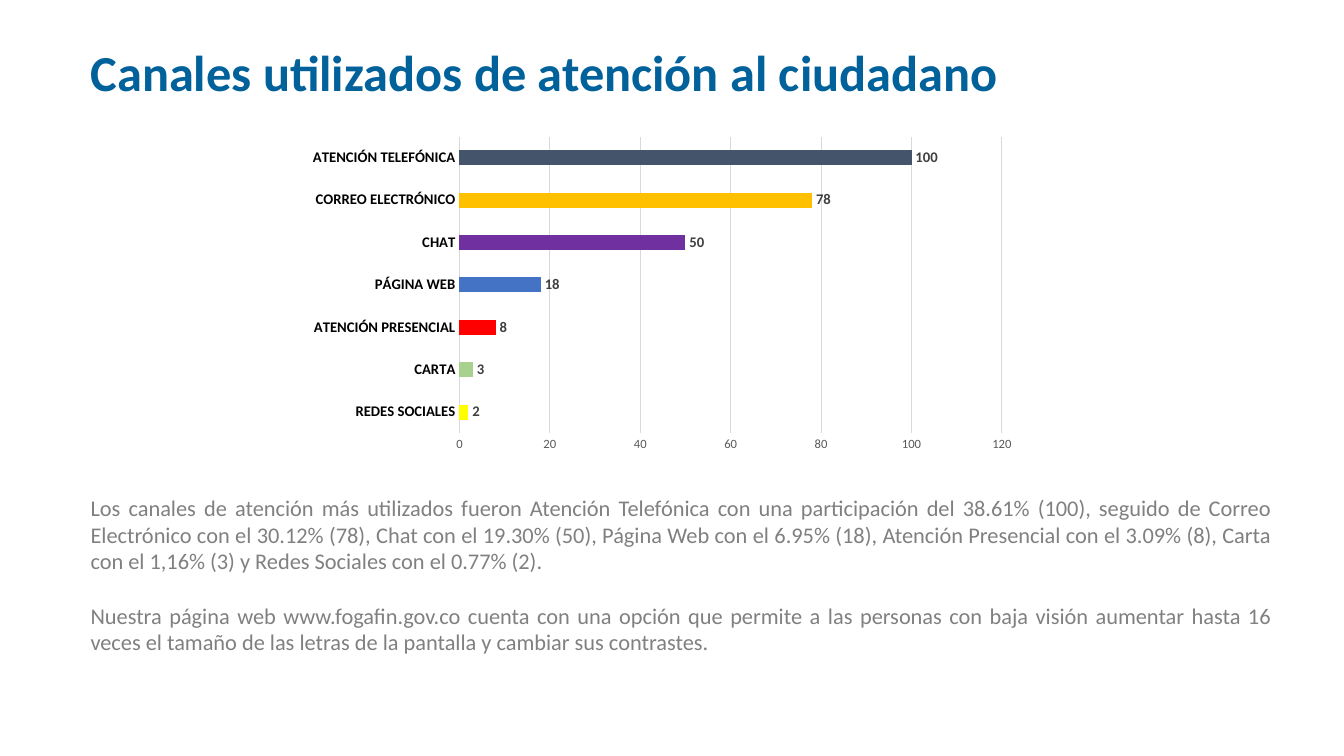
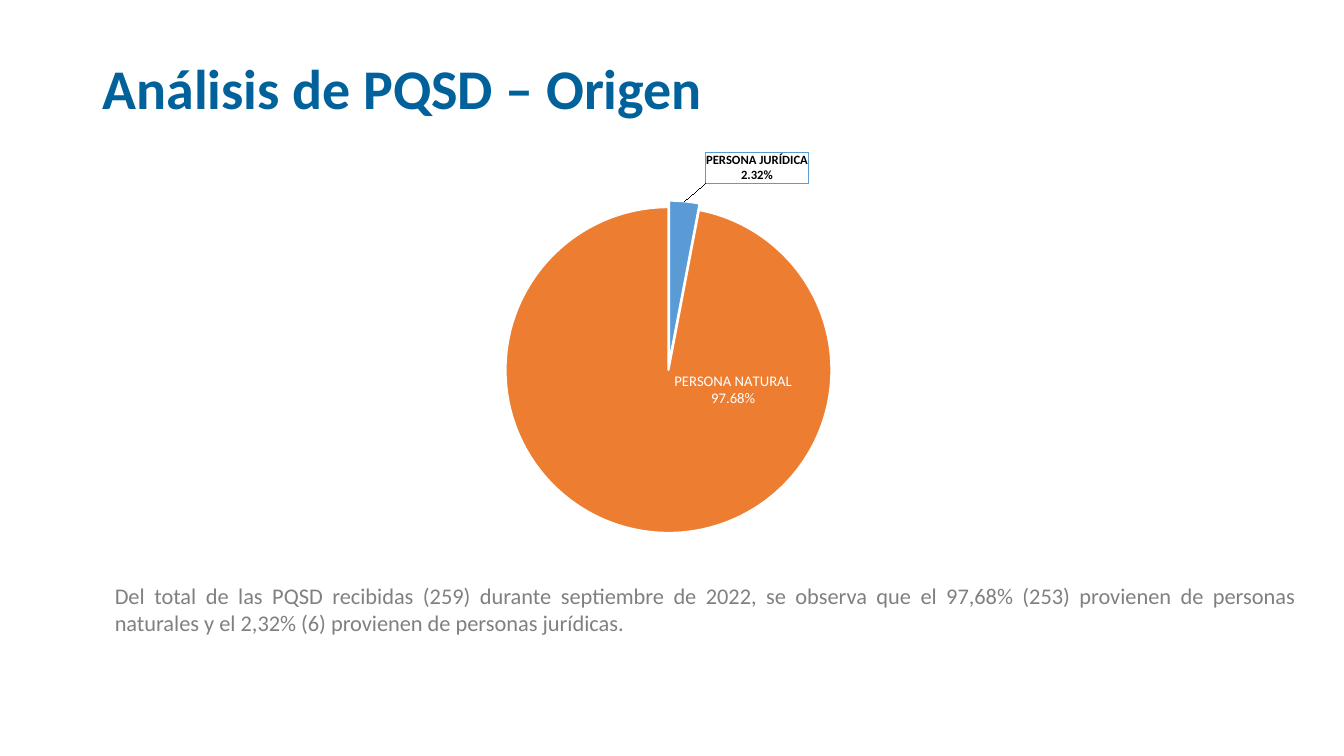
from pptx import Presentation
from pptx.chart.data import CategoryChartData
from pptx.dml.color import RGBColor
from pptx.enum.chart import XL_CHART_TYPE, XL_LABEL_POSITION, XL_TICK_MARK
from pptx.enum.text import MSO_ANCHOR, PP_ALIGN
from pptx.oxml import parse_xml
from pptx.oxml.ns import nsdecls
from pptx.util import Inches, Pt

BAR = XL_CHART_TYPE.BAR_CLUSTERED
PIE = XL_CHART_TYPE.PIE
OUTSIDE = XL_LABEL_POSITION.OUTSIDE_END
INSIDE = XL_LABEL_POSITION.INSIDE_END
NO_TICK = XL_TICK_MARK.NONE
MIDDLE = MSO_ANCHOR.MIDDLE
JUSTIFY = PP_ALIGN.JUSTIFY

WIDTH, HEIGHT = Inches(13.33), Inches(7.5)
COLUMN, ROW = WIDTH / 100, HEIGHT / 100
FONT = "Calibri"
COLORS = {
    "title": "01619B",
    "body": "808080",
    "black": "000000",
    "white": "FFFFFF",
    "label": "404040",
    "tick": "595959",
    "grid": "D9D9D9",
    "sky": "5B9BD5",
    "orange": "ED7D31",
    "yellow": "FFFF00",
    "green": "A9D18E",
    "red": "FF0000",
    "blue": "4472C4",
    "purple": "7030A0",
    "gold": "FFC000",
    "slate": "44546A",
}
CHANNELS = [
    ("REDES SOCIALES", 2, "yellow"),
    ("CARTA", 3, "green"),
    ("ATENCIÓN PRESENCIAL", 8, "red"),
    ("PÁGINA WEB", 18, "blue"),
    ("CHAT", 50, "purple"),
    ("CORREO ELECTRÓNICO", 78, "gold"),
    ("ATENCIÓN TELEFÓNICA", 100, "slate"),
]
ORIGINS = [
    ("PERSONA JURÍDICA", 3, "sky"),
    ("PERSONA NATURAL", 97, "orange"),
]
CHANNEL_TEXT = [
    "Los canales de atención más utilizados fueron Atención Telefónica con una "
    "participación del 38.61% (100), seguido de Correo Electrónico con el 30.12% (78), "
    "Chat con el 19.30% (50), Página Web con el 6.95% (18), Atención Presencial con el "
    "3.09% (8), Carta con el 1,16% (3) y Redes Sociales con el 0.77% (2).",
    "Nuestra página web www.fogafin.gov.co cuenta con una opción que permite a las "
    "personas con baja visión aumentar hasta 16 veces el tamaño de las letras de la "
    "pantalla y cambiar sus contrastes.",
]
ORIGIN_TEXT = [
    "Del total de las PQSD recibidas (259) durante septiembre de 2022, se observa que "
    "el 97,68% (253) provienen de personas naturales y el 2,32% (6) provienen de "
    "personas jurídicas.",
]


def color(name):
    return RGBColor.from_string(COLORS[name])


def area(left, top, width, height):
    return (round(left * COLUMN), round(top * ROW),
            round(width * COLUMN), round(height * ROW))


def style(font, size, name, bold=False):
    font.name = FONT
    font.size = Pt(size)
    font.bold = bold
    font.color.rgb = color(name)


def add_text(page, place, lines, size, name, bold=False):
    box = page.shapes.add_textbox(*area(*place))
    frame = box.text_frame
    frame.word_wrap = True
    frame.text = "\n".join(lines)
    for para in frame.paragraphs:
        for span in para.runs:
            style(span.font, size, name, bold)
    return frame


def add_title(page, left, top, text, size):
    frame = add_text(page, (left, top, 79.42, 14.53), [text], size, "title", True)
    frame.vertical_anchor = MIDDLE
    frame.paragraphs[0].line_spacing = 0.9


def add_body(page, left, top, height, lines):
    frame = add_text(page, (left, top, 89.4, height), lines, 16, "body")
    for index, para in enumerate(frame.paragraphs):
        para.alignment = JUSTIFY
        if index:
            para.space_before = Pt(19.5)


def add_chart(page, kind, place, rows):
    data = CategoryChartData()
    data.categories = [row[0] for row in rows]
    data.add_series("Series 1", [row[1] for row in rows])
    chart = page.shapes.add_chart(kind, *area(*place), data).chart
    chart.has_title = False
    chart.has_legend = False
    style(chart.font, 10, "black")
    series = chart.plots[0].series[0]
    for index, row in enumerate(rows):
        fill = series.points[index].format.fill
        fill.solid()
        fill.fore_color.rgb = color(row[2])
    return chart


def style_axis(axis, size, name, bold=False):
    axis.major_tick_mark = NO_TICK
    axis.minor_tick_mark = NO_TICK
    style(axis.tick_labels.font, size, name, bold)


def style_line(line, name, width=0.75):
    line.color.rgb = color(name)
    line.width = Pt(width)


def add_bars(page, place, rows):
    chart = add_chart(page, BAR, place, rows)
    plot = chart.plots[0]
    plot.vary_by_categories = False
    plot.gap_width = 182
    plot.has_data_labels = True
    labels = plot.data_labels
    labels.show_value = True
    labels.position = OUTSIDE
    style(labels.font, 10.5, "label", True)
    style_axis(chart.category_axis, 10.5, "black", True)
    style_line(chart.category_axis.format.line, "grid")
    values = chart.value_axis
    style_axis(values, 9, "tick")
    values.minimum_scale, values.maximum_scale, values.major_unit = 0, 120, 20
    values.has_major_gridlines = True
    style_line(values.major_gridlines.format.line, "grid")
    values.format.line.fill.background()


def layout_xml(left, top, size=None):
    parts = '<c:xMode val="edge"/><c:yMode val="edge"/>' if size else ""
    target = '<c:layoutTarget val="inner"/>' if size else ""
    extent = f'<c:w val="{size[0]}"/><c:h val="{size[1]}"/>' if size else ""
    return parse_xml(
        f'<c:layout {nsdecls("c")}><c:manualLayout>{target}{parts}'
        f'<c:x val="{left}"/><c:y val="{top}"/>{extent}</c:manualLayout></c:layout>')


def label_slice(point, lines, position, size, name, bold=False):
    label = point.data_label
    frame = label.text_frame
    frame.text = "\n".join(lines)
    for para in frame.paragraphs:
        for span in para.runs:
            style(span.font, size, name, bold)
    label.position = position


def add_pie(page, place, rows):
    chart = add_chart(page, PIE, place, rows)
    plot = chart.plots[0]
    plot.vary_by_categories = True
    points = plot.series[0].points
    for index in range(len(rows)):
        style_line(points[index].format.line, "white", 1.5)
    label_slice(points[0], [rows[0][0], "2.32%"], OUTSIDE, 9, "black", True)
    label_slice(points[1], [rows[1][0], "97.68%"], INSIDE, 10.5, "white")

    root = chart._chartSpace
    for old in root.xpath("c:chart/c:plotArea/c:layout"):
        old.getparent().remove(old)
    root.xpath("c:chart/c:plotArea")[0].insert(0, layout_xml(0.08, 0.15, (0.83, 0.8)))
    root.xpath(".//c:dPt/c:spPr")[0].addprevious(
        parse_xml(f'<c:explosion {nsdecls("c")} val="4"/>'))
    shifts = [(0.03, -0.03), (0.03, -0.29)]
    for mark, shift in zip(root.xpath(".//c:dLbl/c:idx"), shifts):
        mark.addnext(layout_xml(*shift))
    root.xpath(".//c:dLbl/c:tx")[0].addnext(parse_xml(
        f'<c:spPr {nsdecls("c", "a")}>'
        f'<a:solidFill><a:srgbClr val="{COLORS["white"]}"/></a:solidFill>'
        f'<a:ln w="9525"><a:solidFill><a:srgbClr val="{COLORS["sky"]}"/></a:solidFill>'
        '</a:ln></c:spPr>'))
    for leader in root.xpath(".//c:dLbls/c:showLeaderLines"):
        leader.set("val", "1")


def main():
    deck = Presentation()
    deck.slide_width, deck.slide_height = WIDTH, HEIGHT
    blank = deck.slide_layouts[6]

    page = deck.slides.add_slide(blank)
    add_title(page, 6, 2.67, "Canales utilizados de atención al ciudadano", 36)
    add_body(page, 6, 64.67, 22.93, CHANNEL_TEXT)
    add_bars(page, (22.2, 17.2, 54.15, 43.47), CHANNELS)

    page = deck.slides.add_slide(blank)
    add_title(page, 6.9, 4.8, "Análisis de PQSD – Origen", 40)
    add_body(page, 7.8, 76.4, 8.53, ORIGIN_TEXT)
    add_pie(page, (24.38, 19.33, 51.23, 53.87), ORIGINS)

    deck.save("out.pptx")


if __name__ == "__main__":
    main()
